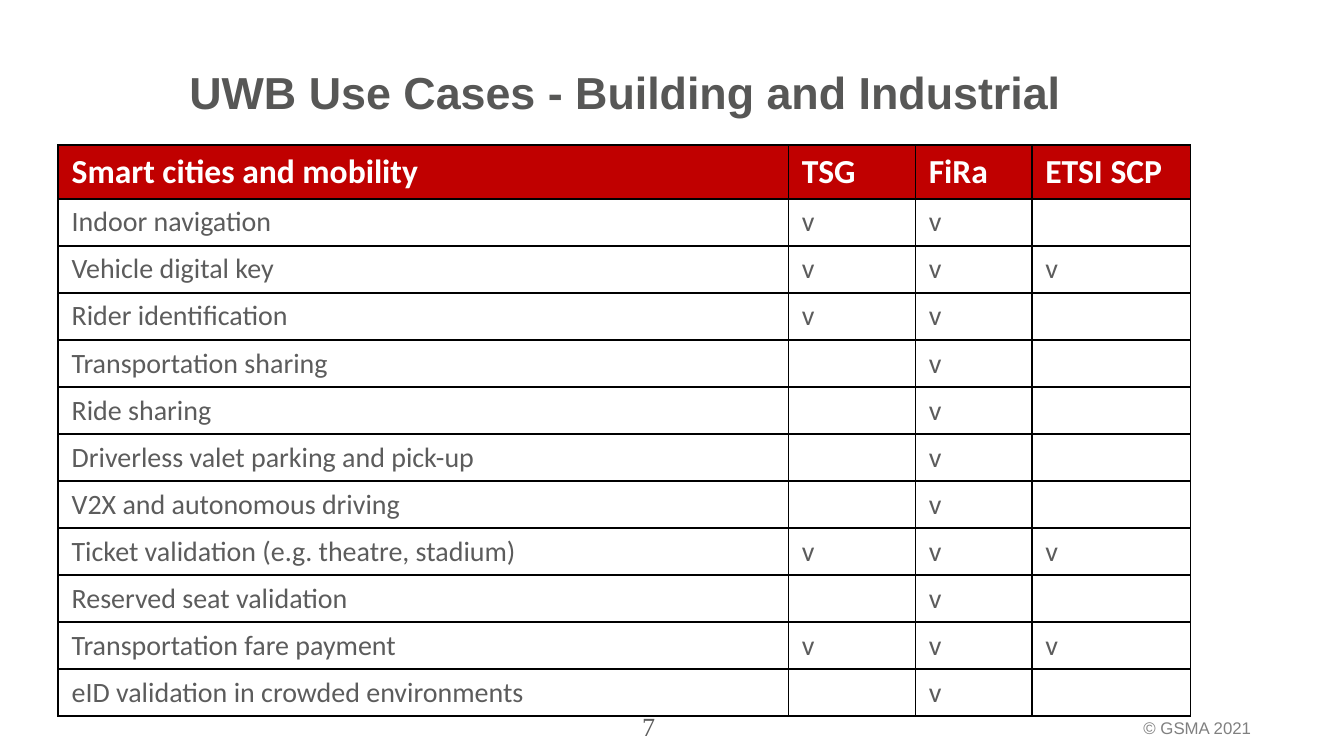
from lxml import etree
from pptx import Presentation
from pptx.dml.color import RGBColor
from pptx.enum.text import PP_ALIGN
from pptx.oxml.ns import qn
from pptx.util import Cm, Pt

LEFT, CENTER = PP_ALIGN.LEFT, PP_ALIGN.CENTER
BORDERS = ("a:lnL", "a:lnR", "a:lnT", "a:lnB")


def rgb(value):
    return RGBColor.from_string(value)


def write(p, text, size, font, color, bold=False):
    r = p.add_run()
    r.text = text
    r.font.size = Pt(size)
    r.font.name = font
    r.font.bold = bold
    r.font.color.rgb = rgb(color)


prs = Presentation()
prs.slide_width = Cm(25.4)
prs.slide_height = Cm(14.29)
s = prs.slides.add_slide(prs.slide_layouts[6])

rows = [
    ("Smart cities and mobility", "TSG", "FiRa", "ETSI SCP"),
    ("Indoor navigation", "v", "v", ""),
    ("Vehicle digital key", "v", "v", "v"),
    ("Rider identification", "v", "v", ""),
    ("Transportation sharing", "", "v", ""),
    ("Ride sharing", "", "v", ""),
    ("Driverless valet parking and pick-up", "", "v", ""),
    ("V2X and autonomous driving", "", "v", ""),
    ("Ticket validation (e.g. theatre, stadium)", "v", "v", "v"),
    ("Reserved seat validation", "", "v", ""),
    ("Transportation fare payment", "v", "v", "v"),
    ("eID validation in crowded environments", "", "v", ""),
]
widths = [13.8, 2.4, 2.2, 3]
header_height, row_height = 1.02, 0.88

frame = s.shapes.add_table(len(rows), len(widths), Cm(1.1), Cm(2.74), Cm(sum(widths)),
                           Cm(header_height + row_height * (len(rows) - 1)))
table = frame.table
for column, width in zip(table.columns, widths):
    column.width = Cm(width)

for i, row in enumerate(rows):
    header = i == 0
    table.rows[i].height = Cm(header_height if header else row_height)
    for j, text in enumerate(row):
        cell = table.cell(i, j)
        cell.margin_top = cell.margin_bottom = Cm(0.12)
        p = cell.text_frame.paragraphs[0]
        if text:
            write(p, text, 18 if header else 15, "Calibri", "FFFFFF" if header else "5C5C5C", header)
        else:
            etree.SubElement(p._p, qn("a:endParaRPr"), sz="1500")
        tcPr = cell._tc.get_or_add_tcPr()
        for tag in BORDERS:
            ln = etree.SubElement(tcPr, qn(tag), w=str(Pt(1)))
            fill = etree.SubElement(ln, qn("a:solidFill"))
            etree.SubElement(fill, qn("a:srgbClr"), val="000000")
        if header:
            cell.fill.solid()
            cell.fill.fore_color.rgb = rgb("C00000")
        else:
            cell.fill.background()

labels = [
    ("UWB Use Cases - Building and Industrial", 3.33, 1.09, 20.55, 2.39, 0.13, 24, "Arial", "575756", True, LEFT),
    ("© GSMA 2021", 21.36, 13.44, 3.99, 0.64, 0.13, 9, "Arial", "808080", False, LEFT),
    ("7", 9.3, 13.23, 5.92, 0.76, 0.2, 14, "Times New Roman", "5C5C5C", False, CENTER),
]
for text, left, top, width, height, inset, size, font, color, bold, align in labels:
    sp = s.shapes.add_textbox(Cm(left), Cm(top), Cm(width), Cm(height))
    tf = sp.text_frame
    tf.word_wrap = True
    tf.margin_top = Cm(inset)
    p = tf.paragraphs[0]
    p.alignment = align
    write(p, text, size, font, color, bold)

prs.save("out.pptx")
